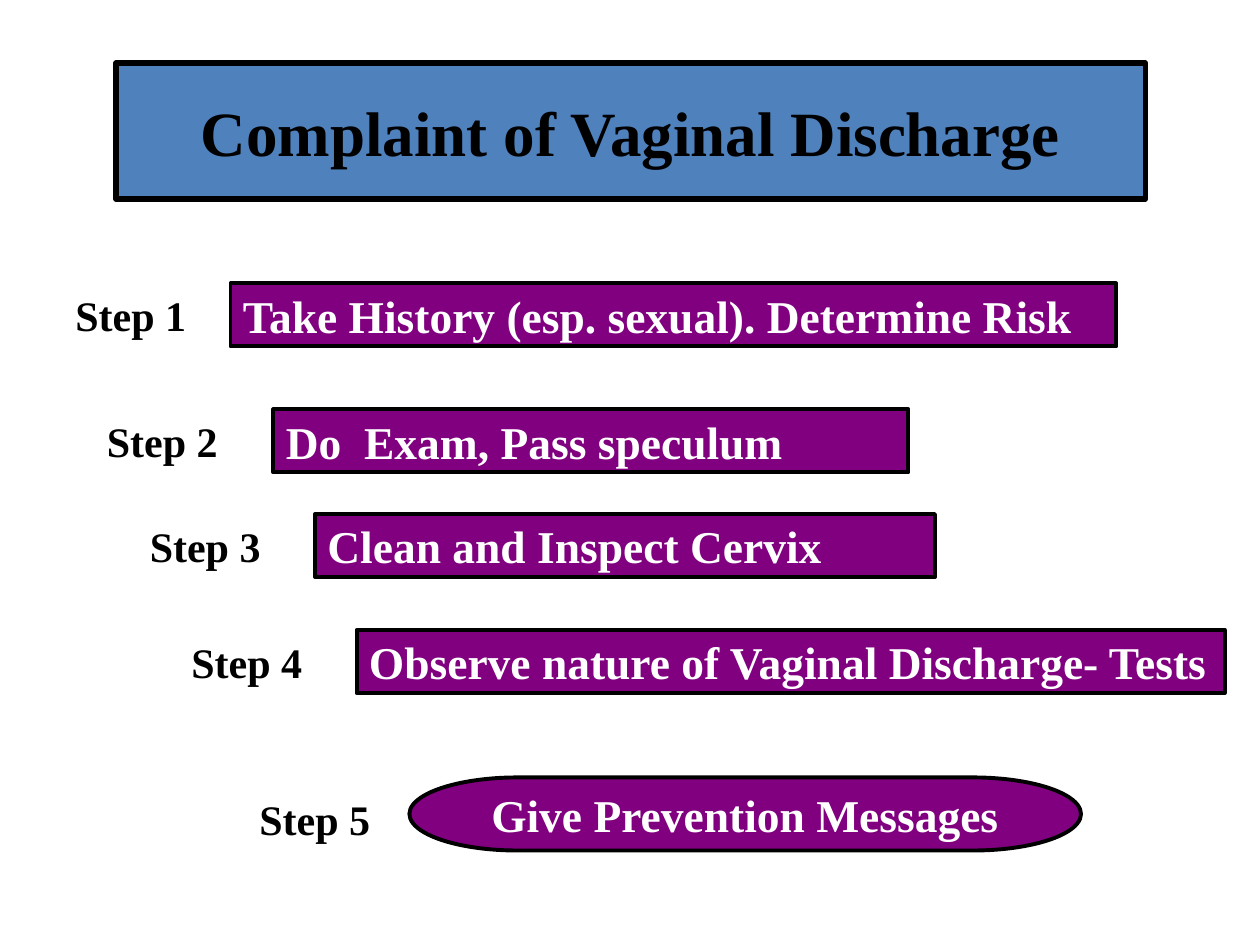
"""Builds the five-step flow slide for a complaint of vaginal discharge."""
from dataclasses import dataclass

from lxml.etree import SubElement
from pptx import Presentation
from pptx.dml.color import RGBColor
from pptx.enum.shapes import MSO_SHAPE as Preset
from pptx.enum.text import MSO_ANCHOR as Anchor, MSO_AUTO_SIZE as AutoSize, PP_ALIGN as Align
from pptx.oxml.ns import qn
from pptx.util import Inches, Pt


@dataclass(frozen=True)
class Theme:
    font: str = "Times New Roman"
    black: RGBColor = RGBColor(0, 0, 0)
    white: RGBColor = RGBColor(255, 255, 255)
    blue: RGBColor = RGBColor(0x4F, 0x81, 0xBD)
    purple: RGBColor = RGBColor(0x80, 0, 0x80)
    title_size: int = 36
    action_size: int = 26
    label_size: int = 24


THEME = Theme()
LABEL_WIDTH, LABEL_HEIGHT = 1.08, 0.5
STEPS = [
    ("Take History (esp. sexual). Determine Risk", (0.5, 2.25), (1.83, 2.25, 7.03, 0.5)),
    ("Do  Exam, Pass speculum", (0.75, 3.25), (2.17, 3.25, 5.04, 0.5)),
    ("Clean and Inspect Cervix", (1.09, 4.08), (2.5, 4.08, 4.92, 0.5)),
    ("Observe nature of Vaginal Discharge- Tests", (1.42, 5), (2.83, 5, 6.89, 0.5)),
    ("Give Prevention Messages", (1.96, 6.25), (3.25, 6.17, 5.33, 0.58)),
]


def write_text(shape, text, size, color=THEME.black, align=Align.LEFT,
               anchor=Anchor.MIDDLE, auto_size=AutoSize.NONE):
    frame = shape.text_frame
    frame.word_wrap = False
    frame.auto_size = auto_size
    frame.vertical_anchor = anchor
    paragraph = frame.paragraphs[0]
    paragraph.alignment = align
    run = paragraph.add_run()
    run.text = text
    run.font.name = THEME.font
    run.font.size = Pt(size)
    run.font.bold = True
    run.font.color.rgb = color


def paint(shape, fill, line_width):
    shape.fill.solid()
    shape.fill.fore_color.rgb = fill
    shape.line.color.rgb = THEME.black
    shape.line.width = Pt(line_width)


def format_title(slide, text):
    title = slide.shapes.title
    title.left, title.top = Inches(0.92), Inches(0.5)
    title.width, title.height = Inches(8.17), Inches(1.08)
    geometry = SubElement(title.element.spPr, qn("a:prstGeom"), prst="flowChartPreparation")
    SubElement(geometry, qn("a:avLst"))
    paint(title, THEME.blue, 3)
    write_text(title, text, THEME.title_size, align=Align.CENTER)


def add_label(slide, text, position):
    box = (*position, LABEL_WIDTH, LABEL_HEIGHT)
    label = slide.shapes.add_textbox(*map(Inches, box))
    write_text(label, text, THEME.label_size, anchor=Anchor.TOP,
               auto_size=AutoSize.SHAPE_TO_FIT_TEXT)


def add_action(slide, text, box, preset, align):
    shape = slide.shapes.add_shape(preset, *map(Inches, box))
    shape.shadow.inherit = False
    paint(shape, THEME.purple, 2.25)
    write_text(shape, text, THEME.action_size, color=THEME.white, align=align)


def main():
    presentation = Presentation()
    presentation.slide_width, presentation.slide_height = Inches(10), Inches(7.5)
    slide = presentation.slides.add_slide(presentation.slide_layouts[5])
    format_title(slide, "Complaint of Vaginal Discharge")
    for number, (text, label_position, box) in enumerate(STEPS, start=1):
        is_last = number == len(STEPS)
        add_label(slide, f"Step {number}", label_position)
        add_action(slide, text, box,
                   preset=Preset.FLOWCHART_TERMINATOR if is_last else Preset.FLOWCHART_PROCESS,
                   align=Align.CENTER if is_last else Align.LEFT)
    presentation.save("out.pptx")


if __name__ == "__main__":
    main()
